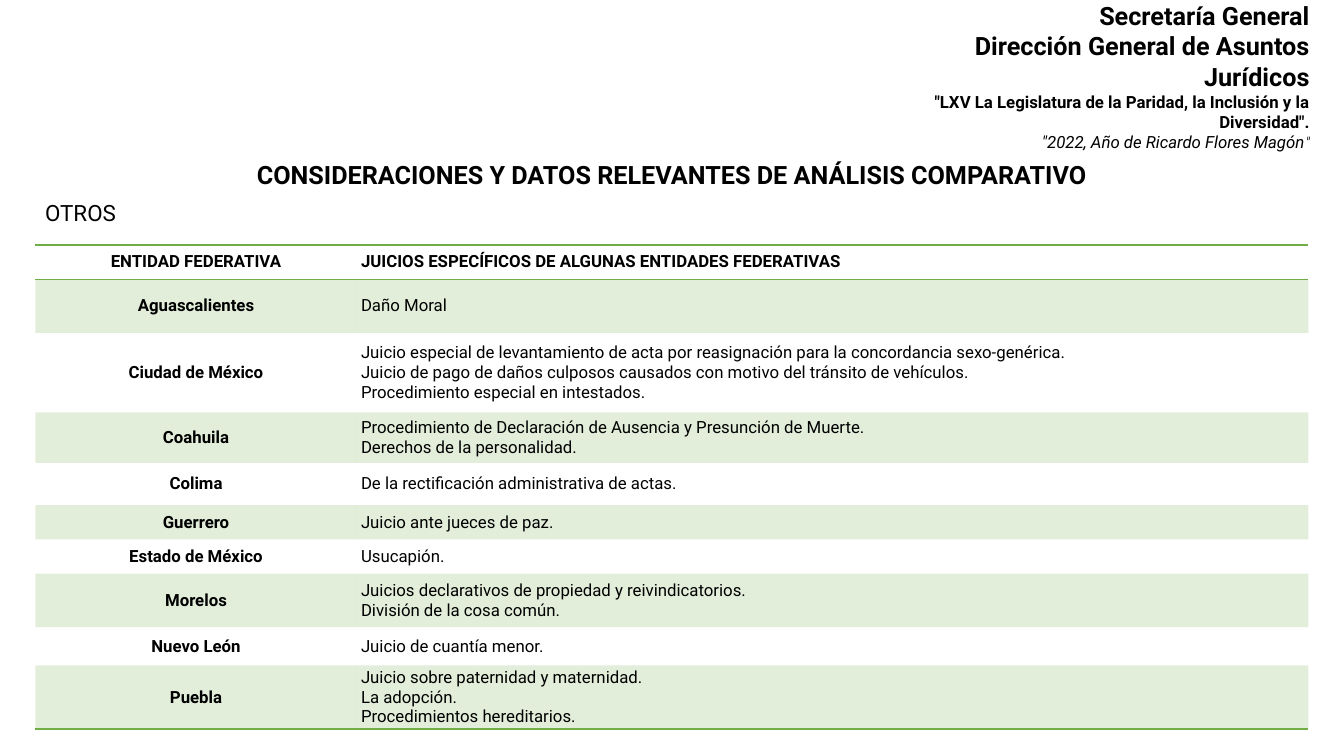
from lxml.etree import SubElement
from pptx import Presentation
from pptx.dml.color import RGBColor
from pptx.enum.text import MSO_ANCHOR, MSO_AUTO_SIZE, PP_ALIGN
from pptx.oxml import parse_xml
from pptx.oxml.ns import nsdecls, qn
from pptx.util import Pt

COLORS = {"text": "000000", "green": "70AD47"}
NO_GRID_STYLE = "{2D5ABB26-0587-4C30-8999-92F81FD0307C}"
LEFT, WIDTH = 25.2, 909.4


def write(p, text, size=12, bold=False, italic=False, font="Roboto", align=PP_ALIGN.LEFT):
    p.alignment = align
    r = p.add_run()
    r.text = text
    r.font.name = font
    r.font.size = Pt(size)
    r.font.bold = bold
    r.font.italic = italic
    r.font.color.rgb = RGBColor.from_string(COLORS["text"])


def add_border(cell, side):
    cell._tc.get_or_add_tcPr().insert(0, parse_xml(
        f'<a:{side} {nsdecls("a")} w="12700"><a:solidFill>'
        f'<a:srgbClr val="{COLORS["green"]}"/></a:solidFill></a:{side}>'))


prs = Presentation()
prs.slide_width = Pt(960)
prs.slide_height = Pt(540)
s = prs.slides.add_slide(prs.slide_layouts[5])

title = s.shapes.title
title.left, title.top, title.width, title.height = Pt(LEFT), Pt(107.3), Pt(WIDTH), Pt(31)
tf = title.text_frame
tf.word_wrap = True
tf.auto_size = MSO_AUTO_SIZE.NONE
tf.vertical_anchor = MSO_ANCHOR.TOP
p = tf.paragraphs[0]
p.line_spacing = 1.15
p.space_before = Pt(0)
write(p, "CONSIDERACIONES Y DATOS RELEVANTES DE ANÁLISIS COMPARATIVO",
      size=18, bold=True, align=PP_ALIGN.CENTER)

header = s.shapes.add_textbox(Pt(616.3), Pt(14.4), Pt(326.2), Pt(80))
tf = header.text_frame
tf.word_wrap = True
tf.vertical_anchor = MSO_ANCHOR.MIDDLE
header_lines = [
    ("Secretaría General", 18, True),
    ("Dirección General de Asuntos Jurídicos", 18, True),
    ('"LXV La Legislatura de la Paridad, la Inclusión y la Diversidad".', 12, True),
    ('"2022, Año de Ricardo Flores Magón', 12, False),
]
for i, (line, size, bold) in enumerate(header_lines):
    p = tf.add_paragraph() if i else tf.paragraphs[0]
    write(p, line, size=size, bold=bold, italic=not bold, align=PP_ALIGN.RIGHT)
write(p, '"', size=11, italic=True, font="TeX Gyre Adventor", align=PP_ALIGN.RIGHT)

subtitle = s.shapes.add_textbox(Pt(LEFT), Pt(141.1), Pt(WIDTH), Pt(31))
tf = subtitle.text_frame
tf.word_wrap = True
p = tf.paragraphs[0]
p.line_spacing = 0.9
write(p, "OTROS", size=16, align=PP_ALIGN.JUSTIFY)

rows = [
    (24.5, "ENTIDAD FEDERATIVA", ["JUICIOS ESPECÍFICOS DE ALGUNAS ENTIDADES FEDERATIVAS"]),
    (38.2, "Aguascalientes", ["Daño Moral"]),
    (56.9, "Ciudad de México", [
        "Juicio especial de levantamiento de acta por reasignación para la concordancia sexo-genérica.",
        "Juicio de pago de daños culposos causados con motivo del tránsito de vehículos.",
        "Procedimiento especial en intestados."]),
    (36, "Coahuila", [
        "Procedimiento de Declaración de Ausencia y Presunción de Muerte.",
        "Derechos de la personalidad."]),
    (30.2, "Colima", ["De la rectificación administrativa de actas."]),
    (24.5, "Guerrero", ["Juicio ante jueces de paz."]),
    (24.5, "Estado de México", ["Usucapión."]),
    (38.2, "Morelos", [
        "Juicios declarativos de propiedad y reivindicatorios.",
        "División de la cosa común."]),
    (27.4, "Nuevo León", ["Juicio de cuantía menor."]),
    (45.4, "Puebla", [
        "Juicio sobre paternidad y maternidad.",
        "La adopción.",
        "Procedimientos hereditarios."]),
]
frame = s.shapes.add_table(len(rows), 2, Pt(LEFT), Pt(175), Pt(WIDTH),
                           Pt(sum(row[0] for row in rows)))
for style in frame.element.iter(qn("a:tableStyleId")):
    style.text = NO_GRID_STYLE
table = frame.table
table.first_row = False
table.horz_banding = False
table.columns[0].width = Pt(229.7)
table.columns[1].width = Pt(679.7)

for i, (height, state, trials) in enumerate(rows):
    table.rows[i].height = Pt(height)
    for j, lines in enumerate([[state], trials]):
        cell = table.cell(i, j)
        cell.vertical_anchor = MSO_ANCHOR.MIDDLE
        cell.margin_left = cell.margin_right = Pt(3)
        cell.margin_top = cell.margin_bottom = Pt(0)
        if i % 2:
            cell.fill.solid()
            cell.fill.fore_color.rgb = RGBColor.from_string(COLORS["green"])
            for color in cell._tc.tcPr.iter(qn("a:srgbClr")):
                SubElement(color, qn("a:alpha")).set("val", "20000")
        else:
            cell.fill.background()
        if i in (0, len(rows) - 1):
            add_border(cell, "lnB")
        if i == 0:
            add_border(cell, "lnT")
        body_align = PP_ALIGN.JUSTIFY if i else PP_ALIGN.LEFT
        for k, line in enumerate(lines):
            p = cell.text_frame.add_paragraph() if k else cell.text_frame.paragraphs[0]
            write(p, line, bold=i == 0 or j == 0,
                  align=body_align if j else PP_ALIGN.CENTER)

prs.save("out.pptx")
